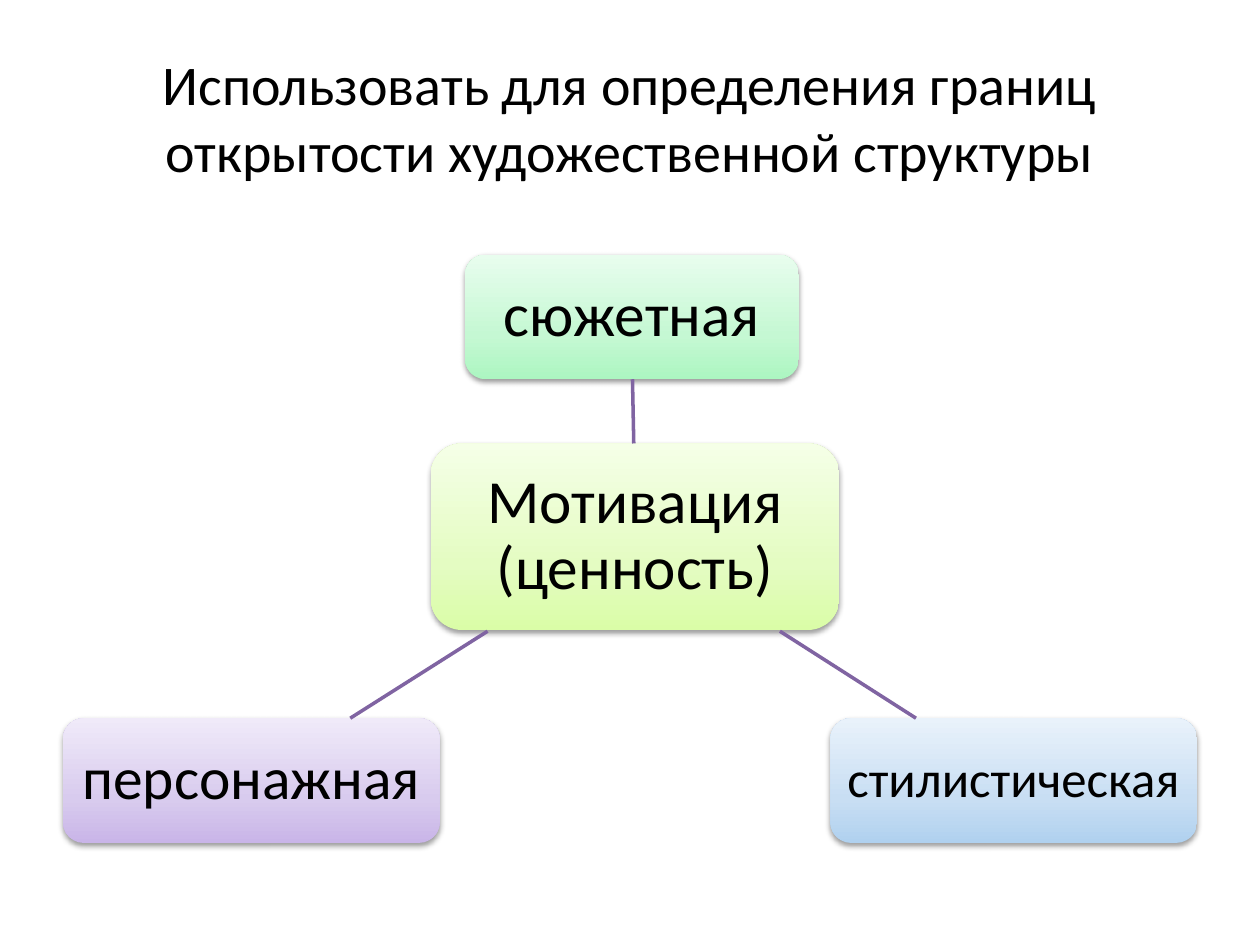
"""Build a slide with a motivation hub linked to three surrounding boxes."""
from copy import deepcopy

from lxml import etree
from pptx import Presentation
from pptx.dml.color import RGBColor
from pptx.enum import shapes, text
from pptx.oxml.ns import qn
from pptx.util import Inches, Pt

BLACK = RGBColor(0x00, 0x00, 0x00)
PURPLE = RGBColor(0x80, 0x64, 0xA2)
LIME = [RGBColor(0xDA, 0xFD, 0xA7), RGBColor(0xE4, 0xFC, 0xC2), RGBColor(0xF5, 0xFF, 0xE7)]
GREEN = [RGBColor(0xAC, 0xF6, 0xC1), RGBColor(0xC5, 0xF8, 0xD3), RGBColor(0xE8, 0xFD, 0xEE)]
BLUE = [RGBColor(0xB0, 0xD1, 0xEF), RGBColor(0xC8, 0xDE, 0xF3), RGBColor(0xE9, 0xF2, 0xFB)]
VIOLET = [RGBColor(0xC9, 0xB5, 0xE8), RGBColor(0xD8, 0xCB, 0xEE), RGBColor(0xF0, 0xEA, 0xF9)]
STOP_POSITIONS = [0, 0.35, 1]


def write_text(shape, wording, size):
    frame = shape.text_frame
    frame.text = wording
    frame.word_wrap = True
    frame.vertical_anchor = text.MSO_ANCHOR.MIDDLE
    paragraph = frame.paragraphs[0]
    paragraph.alignment = text.PP_ALIGN.CENTER
    font = paragraph.runs[0].font
    font.name = "Calibri"
    font.size = Pt(size)
    font.color.rgb = BLACK


presentation = Presentation()
presentation.slide_width = Inches(10)
presentation.slide_height = Inches(7.5)
slide = presentation.slides.add_slide(presentation.slide_layouts[5])

title = slide.shapes.title
title.left, title.top, title.width, title.height = map(Inches, (0.5, 0.3, 9, 1.25))
write_text(title, "Использовать для определения границ открытости художественной структуры", 32)

boxes = [
    ("Мотивация (ценность)", 3.42, 3.52, 3.24, 1.48, 35, LIME),
    ("сюжетная", 3.69, 2.02, 2.65, 0.99, 35, GREEN),
    ("стилистическая", 6.59, 5.7, 2.91, 0.99, 29, BLUE),
    ("персонажная", 0.5, 5.7, 2.99, 0.99, 34, VIOLET),
]
for wording, left, top, width, height, size, colors in boxes:
    box = slide.shapes.add_shape(
        shapes.MSO_SHAPE.ROUNDED_RECTANGLE,
        Inches(left), Inches(top), Inches(width), Inches(height),
    )
    box.line.fill.background()
    box.fill.gradient()
    box.fill.gradient_angle = 90
    stop_list = box._element.spPr.find(qn("a:gradFill")).find(qn("a:gsLst"))
    stop_list.insert(1, deepcopy(stop_list[0]))
    for stop, position, color in zip(box.fill.gradient_stops, STOP_POSITIONS, colors):
        stop.position = position
        stop.color.rgb = color

    box.shadow.inherit = False
    effects = box._element.spPr.find(qn("a:effectLst"))
    shadow = etree.SubElement(
        effects, qn("a:outerShdw"),
        blurRad="40000", dist="20000", dir="5400000", rotWithShape="0",
    )
    shadow_color = etree.SubElement(shadow, qn("a:srgbClr"), val="000000")
    etree.SubElement(shadow_color, qn("a:alpha"), val="38000")

    write_text(box, wording, size)
    frame = box.text_frame
    frame.margin_left = frame.margin_right = Inches(0.04)
    frame.margin_top = frame.margin_bottom = Inches(0.1)
    frame.paragraphs[0].line_spacing = 0.9

links = [
    (5.03, 3.52, 5.02, 3.01),
    (6.19, 5.01, 7.27, 5.7),
    (3.87, 5.01, 2.78, 5.7),
]
for ends in links:
    link = slide.shapes.add_connector(shapes.MSO_CONNECTOR.STRAIGHT, *map(Inches, ends))
    link.line.color.rgb = PURPLE
    link.line.width = Pt(2)
    etree.SubElement(link._element.spPr, qn("a:effectLst"))

presentation.save("out.pptx")
